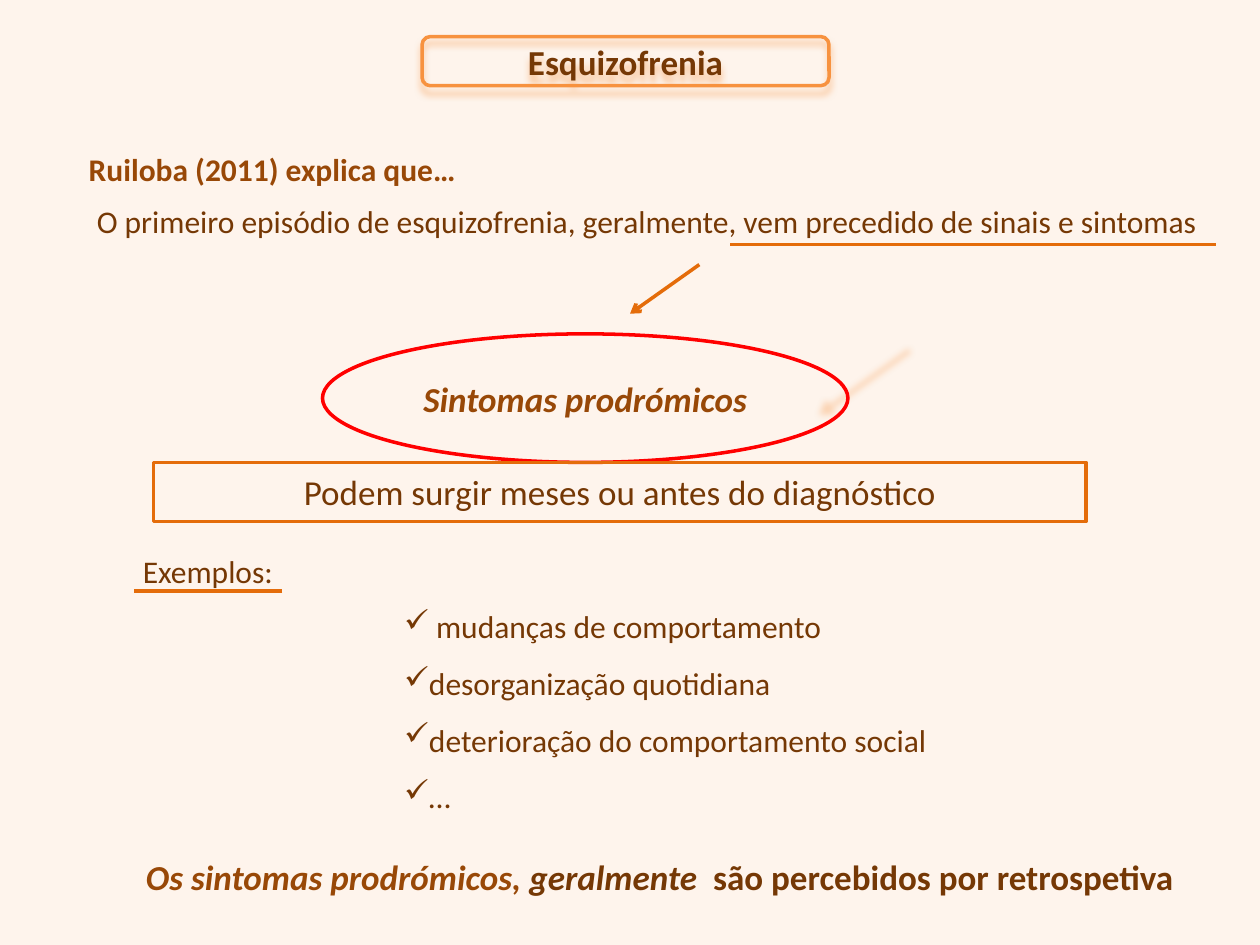
"""Build the slide on the prodromal symptoms of schizophrenia."""
from lxml import etree
from pptx import Presentation, util as u
from pptx.dml.color import RGBColor
from pptx.enum import shapes, text
from pptx.oxml import ns

CREAM = RGBColor(0xFE, 0xF4, 0xEC)
PEACH = RGBColor(0xFA, 0xC0, 0x90)
AMBER = RGBColor(0xF7, 0x92, 0x3F)
ORANGE = RGBColor(0xE4, 0x6C, 0x0A)
RED = RGBColor(0xFF, 0x00, 0x00)
RUST = RGBColor(0x98, 0x48, 0x07)
BROWN = RGBColor(0x75, 0x38, 0x05)
FORM = shapes.MSO_SHAPE
MID = text.PP_ALIGN.CENTER
LEFT = text.PP_ALIGN.LEFT

deck = Presentation()
deck.slide_width, deck.slide_height = u.Inches(10), u.Inches(7.5)
slide = deck.slides.add_slide(deck.slide_layouts[6])
slide.background.fill.solid()
slide.background.fill.fore_color.rgb = CREAM


def place(*shares):
    """Turn percent shares of the slide into lengths."""
    sides = (deck.slide_width, deck.slide_height) * 2
    return [u.Emu(int(side * part / 100)) for side, part in zip(sides, shares)]


def shade(item, tint=None, alpha=100, scale=100):
    """Give an item one soft shadow below it, or none."""
    props = item._element.spPr
    for old in props.findall(ns.qn("a:effectLst")):
        props.remove(old)
    group = etree.SubElement(props, ns.qn("a:effectLst"))
    if tint is not None:
        cast = etree.SubElement(
            group, ns.qn("a:outerShdw"), blurRad=str(u.Pt(4)), dist=str(u.Pt(4)),
            dir="5400000", sx=str(scale * 1000), sy=str(scale * 1000),
            algn="tl", rotWithShape="0")
        color = etree.SubElement(cast, ns.qn("a:srgbClr"), val=str(tint))
        etree.SubElement(color, ns.qn("a:alpha"), val=str(alpha * 1000))


ends = [
    ((55.5, 28, 50, 33.2), True),
    ((96.5, 25.87, 57.9, 25.87), False),
    ((22.4, 62.53, 10.6, 62.53), False),
]
for span, arrow in ends:
    line = slide.shapes.add_connector(shapes.MSO_CONNECTOR.STRAIGHT, *place(*span))
    line.line.color.rgb = ORANGE
    line.line.width = u.Pt(2)
    if arrow:
        etree.SubElement(line.line._get_or_add_ln(), ns.qn("a:tailEnd"), type="arrow")
        shade(line, AMBER, 32, 130)
    else:
        shade(line)

frames = [
    (FORM.OVAL, (25.6, 35.33, 41.7, 13.6), RED, "Sintomas prodrómicos", RUST, True, True),
    (FORM.RECTANGLE, (12.2, 48.93, 74, 6.27), ORANGE,
     "Podem surgir meses ou antes do diagnóstico", BROWN, False, False),
    (FORM.ROUNDED_RECTANGLE, (33.5, 3.87, 32.3, 5.2), AMBER,
     "Esquizofrenia", BROWN, True, False),
]
for form, area, edge, words, ink, bold, slant in frames:
    frame = slide.shapes.add_shape(form, *place(*area))
    frame.fill.background()
    frame.line.color.rgb = edge
    frame.line.width = u.Pt(2)
    if form == FORM.ROUNDED_RECTANGLE:
        shade(frame, PEACH)
    else:
        frame.shadow.inherit = False
    frame.text_frame.vertical_anchor = text.MSO_ANCHOR.MIDDLE
    para = frame.text_frame.paragraphs[0]
    para.text = words
    para.alignment = MID
    font = para.runs[0].font
    font.name, font.size, font.bold, font.italic = "Calibri", u.Pt(20), bold, slant
    font.color.rgb = ink

signs = [" mudanças de comportamento", "desorganização quotidiana",
         "deterioração do comportamento social", "…"]
close = [("Os sintomas prodrómicos, ", RUST, True, True),
         ("geralmente  ", BROWN, True, True),
         ("são percebidos por retrospetiva", BROWN, True, False)]
notes = [
    ((5.9, 13.2, 32, 6.8), [[("Ruiloba (2011) explica que… ", RUST, True, False)]],
     18, MID, 1.5, False, False),
    ((6.7, 20.67, 95.7, 5.33),
     [[("O primeiro episódio de esquizofrenia, geralmente, vem precedido de sinais e sintomas",
        BROWN, False, False)]], 18, LEFT, 1, True, False),
    ((4.3, 57.33, 24.4, 6.27), [[("Exemplos:", BROWN, False, False)]],
     18, MID, 1, True, False),
    ((31.1, 61.6, 53.1, 25.6), [[(sign, BROWN, False, False)] for sign in signs],
     18, LEFT, 1.5, True, True),
    ((10.6, 89.87, 84.2, 5.87), [close], 20, LEFT, 1, False, False),
]
for area, paras, size, align, space, wrap, ticks in notes:
    body = slide.shapes.add_textbox(*place(*area)).text_frame
    body.word_wrap = wrap
    body.vertical_anchor = text.MSO_ANCHOR.MIDDLE if align == MID and wrap else text.MSO_ANCHOR.TOP
    for row, parts in enumerate(paras):
        para = body.add_paragraph() if row else body.paragraphs[0]
        para.alignment = align
        para.line_spacing = space
        if ticks:
            etree.SubElement(para._p.get_or_add_pPr(), ns.qn("a:buChar"), char="✓")
        for words, ink, bold, slant in parts:
            run = para.add_run()
            run.text = words
            font = run.font
            font.name, font.size, font.bold, font.italic = "Calibri", u.Pt(size), bold, slant
            font.color.rgb = ink

deck.save("out.pptx")
